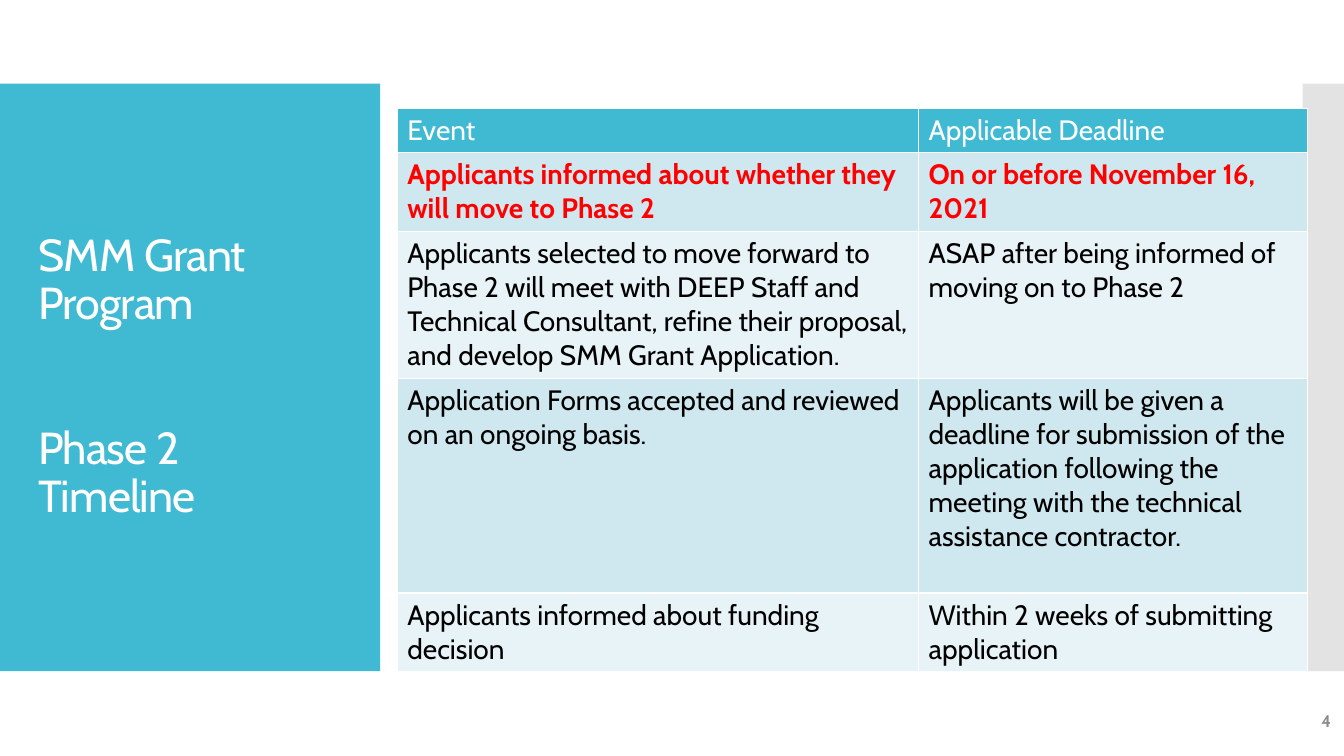
from pptx import Presentation
from pptx import util as u
from pptx.dml.color import RGBColor
from pptx.enum import shapes, text
from pptx.oxml.xmlchemy import OxmlElement

TEAL = RGBColor(0x40, 0xBA, 0xD2)
GREY = RGBColor(0xC8, 0xC8, 0xC8)
NUMBER_GREY = RGBColor(0x8C, 0x8C, 0x8C)
WHITE = RGBColor(0xFF, 0xFF, 0xFF)
BLACK = RGBColor(0, 0, 0)
RED = RGBColor(0xFF, 0, 0)
BAND_DARK = RGBColor(0xCF, 0xE7, 0xEE)
BAND_LIGHT = RGBColor(0xE8, 0xF3, 0xF7)

FONT = "Cabin"
COLUMN_WIDTHS = (5.17, 3.86)
ROW_HEIGHTS = (0.43, 0.78, 1.46, 2.13, 0.78)
TIMELINE = [
    ("Event", "Applicable Deadline"),
    ("Applicants informed about whether they will move to Phase 2",
     "On or before November 16, 2021"),
    ("Applicants selected to move forward to Phase 2 will meet with DEEP Staff and "
     "Technical Consultant, refine their proposal, and develop SMM Grant Application.",
     "ASAP after being informed of moving on to Phase 2"),
    ("Application Forms accepted and reviewed on an ongoing basis.",
     "Applicants will be given a deadline for submission of the application following "
     "the meeting with the technical assistance contractor."),
    ("Applicants informed about funding decision",
     "Within 2 weeks of submitting application"),
]


def inches(*values):
    """Turn plain numbers into lengths."""
    return [u.Inches(v) for v in values]


def format_runs(p, size, color, bold=False):
    """Give every run of a paragraph its font."""
    for r in p.runs:
        r.font.name = FONT
        r.font.size = u.Pt(size)
        r.font.color.rgb = color
        r.font.bold = bold


def add_panel(slide, box, color, opacity=100):
    """Add a plain filled rectangle."""
    sp = slide.shapes.add_shape(shapes.MSO_SHAPE.RECTANGLE, *inches(*box))
    sp.shadow.inherit = False
    sp.fill.solid()
    sp.fill.fore_color.rgb = color
    sp.line.fill.background()
    if opacity < 100:
        alpha = OxmlElement("a:alpha")
        alpha.set("val", str(opacity * 1000))
        sp.fill._xPr.find(".//{*}srgbClr").append(alpha)


def add_text(slide, box, content):
    """Add a wrapped, vertically centred text box and return its frame."""
    tf = slide.shapes.add_textbox(*inches(*box)).text_frame
    tf.word_wrap = True
    tf.vertical_anchor = text.MSO_ANCHOR.MIDDLE
    tf.text = content
    return tf


def add_title(slide):
    """Add the two-part title on the teal panel."""
    tf = add_text(slide, (0.28, 1.23, 3.22, 5.03), "SMM Grant Program\nPhase 2\nTimeline")
    for p in tf.paragraphs:
        p.line_spacing = 0.9
        format_runs(p, 32, WHITE)
        for r in p.runs:
            r.font._element.set("spc", "-60")
    tf.paragraphs[1].space_before = u.Pt(69)


def add_slide_number(slide):
    """Add the number in the lower right corner."""
    p = add_text(slide, (11.63, 6.95, 1.67, 0.4), "4").paragraphs[0]
    p.alignment = text.PP_ALIGN.RIGHT
    format_runs(p, 12, NUMBER_GREY, True)


def add_timeline(slide):
    """Add the banded table of events and deadlines."""
    box = inches(3.94, 1.08, sum(COLUMN_WIDTHS), sum(ROW_HEIGHTS))
    table = slide.shapes.add_table(len(TIMELINE), len(COLUMN_WIDTHS), *box).table
    for column, width in zip(table.columns, COLUMN_WIDTHS):
        column.width = u.Inches(width)
    for i, (row, height) in enumerate(zip(table.rows, ROW_HEIGHTS)):
        row.height = u.Inches(height)
        band = BAND_DARK if i % 2 else BAND_LIGHT
        color = {0: WHITE, 1: RED}.get(i, BLACK)
        for cell, content in zip(row.cells, TIMELINE[i]):
            cell.fill.solid()
            cell.fill.fore_color.rgb = band if i else TEAL
            cell.text = content
            p = cell.text_frame.paragraphs[0]
            if i == 0:
                p.alignment = text.PP_ALIGN.JUSTIFY
            format_runs(p, 20, color, i == 1)


def main():
    """Build the slide and save it."""
    prs = Presentation()
    prs.slide_width, prs.slide_height = inches(13.33, 7.5)
    slide = prs.slides.add_slide(prs.slide_layouts[6])
    add_panel(slide, (0, 0.83, 3.77, 5.83), TEAL)
    add_panel(slide, (12.92, 0.83, 0.41, 5.83), GREY, 50)
    add_slide_number(slide)
    add_title(slide)
    add_timeline(slide)
    prs.save("out.pptx")


if __name__ == "__main__":
    main()
